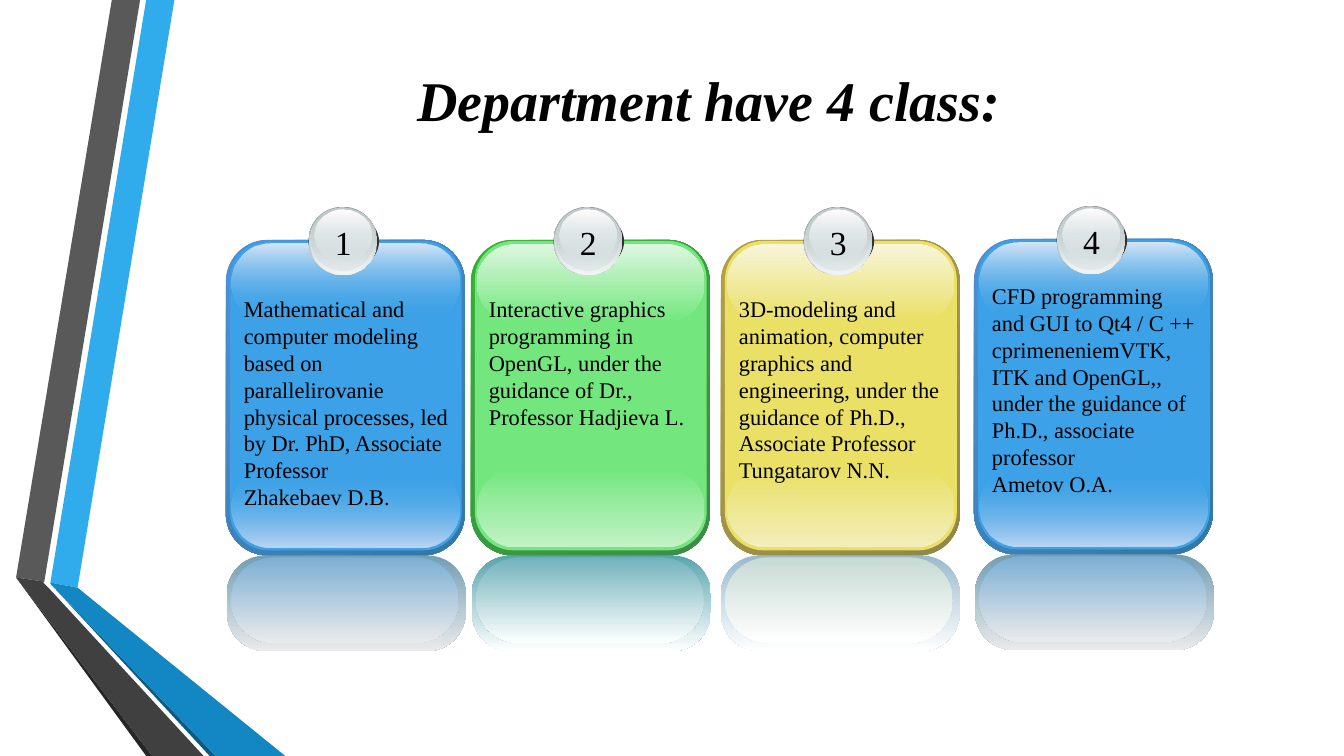
from pptx import Presentation
from pptx.dml.color import RGBColor
from pptx.enum.shapes import MSO_SHAPE
from pptx.enum.text import MSO_ANCHOR, MSO_AUTO_SIZE, PP_ALIGN
from pptx.oxml.ns import qn
from pptx.util import Pt
from lxml.etree import SubElement

PX = 9144  # 100 px to the inch

BLUE = {
    "rim": ("4E91D4", "3477A4"), "face": "3CA1E6",
    "bottom": (("3CA1E6", 0), "BDD6F3"), "top": ("D7E5F7", ("3CA1E6", 0)),
    "mirror": ("729EB4", "EAEAEA"), "mirror_face": ("7DAFD4", "EAEAEA"),
}
GREEN = {
    "rim": ("34B034", "3F8B4A"), "face": "73E77E",
    "bottom": ("73E77E", "C3F2C7"), "top": ("DDF7DF", "73E77E"),
    "mirror": ("58A4AE", "FFFFFF"), "mirror_face": ("72B2BB", "FFFFFF"),
}
YELLOW = {
    "rim": ("B59F43", "8F8849"), "face": "E9E065",
    "bottom": ("E9E065", "F3EEBB"), "top": ("F8F5DB", "E9E065"),
    "mirror": ("99BACC", "FFFFFF"), "mirror_face": ("C8DAD4", "FFFFFF"),
}
THEME = {
    "font": "Times New Roman", "text": "000000",
    "title_size": 40, "number_size": 24, "body_size": 16,
    "badge_shadow": "333333", "badge_rim": ("99A1A2", "D6E1E2"),
    "badge_ring": (("D6E1E2", 0), "F2F5F5"),
    "badge_face": ("C1CBCC", ("D6E1E2", 48)),
    "badge_gloss": ("FFFFFF", ("D6E1E2", 38)),
}


def add_filled(shapes, kind, box, paint, angle=90, corner=None):
    """Add a shape with a solid fill, or a gradient of (colour, opacity %) stops."""
    shape = shapes.add_shape(kind, *(value * PX for value in box))
    shape.shadow.inherit = False
    shape.line.fill.background()
    if corner is not None:
        shape.adjustments[0] = corner
    if isinstance(paint, str):
        shape.fill.solid()
        shape.fill.fore_color.rgb = RGBColor.from_string(paint)
        return
    shape.fill.gradient()
    shape.fill.gradient_angle = 360 - angle
    stops = [(stop, 100) if isinstance(stop, str) else stop for stop in paint]
    for gradient_stop, (colour, _) in zip(shape.fill.gradient_stops, stops):
        gradient_stop.color.rgb = RGBColor.from_string(colour)
    colours = list(shape._element.spPr.iter(qn("a:srgbClr")))
    for element, (_, opacity) in zip(colours, stops):
        if opacity < 100:
            SubElement(element, qn("a:alpha")).set("val", str(opacity * 1000))


def style(paragraph, size):
    paragraph.font.name = THEME["font"]
    paragraph.font.size = Pt(size)
    paragraph.font.color.rgb = RGBColor.from_string(THEME["text"])


presentation = Presentation()
presentation.slide_width = 1333 * PX
presentation.slide_height = 750 * PX
slide = presentation.slides.add_slide(presentation.slide_layouts[5])

# Folded ribbons on the left
ribbons = [
    ("30ACEC", [(50, 578), (77, 583), (173, 0), (145, 0)]),
    ("595959", [(139, 0), (111, 0), (16, 573), (44, 577)]),
    ("262626", [(16, 573), (145, 750), (151, 750)]),
    ("0C5A82", [(50, 579), (208, 750), (214, 750)]),
    ("1287C3", [(50, 578), (50, 579), (214, 750), (283, 750), (77, 583)]),
    ("404040", [(202, 750), (48, 583), (43, 578), (44, 577), (16, 573), (151, 750)]),
]
for colour, points in ribbons:
    builder = slide.shapes.build_freeform(*points[0], scale=PX)
    builder.add_line_segments(points[1:], close=True)
    ribbon = builder.convert_to_shape()
    ribbon.shadow.inherit = False
    ribbon.line.fill.background()
    ribbon.fill.solid()
    ribbon.fill.fore_color.rgb = RGBColor.from_string(colour)

# Title
title = slide.shapes.title
title.left, title.top, title.width, title.height = (
    value * PX for value in (155, 30, 1096, 137))
title.text_frame.text = "Department have 4 class:"
title.text_frame.vertical_anchor = MSO_ANCHOR.MIDDLE
heading = title.text_frame.paragraphs[0]
heading.alignment = PP_ALIGN.CENTER
heading.font.bold = heading.font.italic = True
style(heading, THEME["title_size"])

# Cards: left, top, mirror shift, text top, text height, palette, paragraphs
cards = [
    (224, 238, 1, 288, 226, BLUE, [
        "Mathematical and computer modeling based on parallelirovanie "
        "physical processes, led by Dr. PhD, Associate Professor",
        "Zhakebaev D.B."]),
    (467, 238, 1, 288, 145, GREEN, [
        "Interactive graphics programming in OpenGL, under the guidance of "
        "Dr., Professor Hadjieva L."]),
    (715, 238, 0, 288, 199, YELLOW, [
        "3D-modeling and animation, computer graphics and engineering, under "
        "the guidance of Ph.D., Associate Professor Tungatarov N.N."]),
    (966, 237, 1, 275, 226, BLUE, [
        "CFD programming and GUI to Qt4 / C ++ cprimeneniemVTK, ITK and "
        "OpenGL,, under the guidance of Ph.D., associate professor",
        "Ametov O.A."]),
]
# Layers measured from the card's top left corner
badge_layers = [
    ("badge_shadow", 82, -27, 70, 57), ("badge_rim", 82, -33, 68, 68),
    ("badge_ring", 83, -32, 66, 66), ("badge_face", 84, -32, 63, 62),
    ("badge_gloss", 88, -30, 56, 50),
]
for number, card in enumerate(cards, start=1):
    left, top, shift, text_top, text_height, palette, texts = card
    group = slide.shapes.add_group_shape()
    group.name = f"Class {number}"

    # Glossy panel and its reflection
    panel_layers = [
        ("rim", 0, 0, 237, 313, 45, 0.175),
        ("face", 4, 1, 230, 307, 90, 0.167),
        ("bottom", 6, 227, 226, 78, 90, 0.5),
        ("top", 6, 4, 226, 77, 90, 0.5),
        ("mirror", shift, 313, 237, 95, 90, 0.404),
        ("mirror_face", shift + 4, 315, 226, 85, 90, 0.5),
    ]
    for part, dx, dy, width, height, angle, corner in panel_layers:
        add_filled(group.shapes, MSO_SHAPE.ROUNDED_RECTANGLE,
                   (left + dx, top + dy, width, height),
                   palette[part], angle, corner)

    # Round badge
    for part, dx, dy, width, height in badge_layers:
        add_filled(group.shapes, MSO_SHAPE.OVAL,
                   (left + dx, top + dy, width, height), THEME[part])

    # Badge number and class description
    labels = [
        ((left + 98, top - 23, 37, 51), [str(number)],
         THEME["number_size"], PP_ALIGN.CENTER, False),
        ((left + 8, text_top, 225, text_height), texts,
         THEME["body_size"], PP_ALIGN.LEFT, True),
    ]
    for box, lines, size, alignment, wrap in labels:
        label = group.shapes.add_textbox(*(value * PX for value in box))
        frame = label.text_frame
        frame.word_wrap = wrap
        frame.auto_size = MSO_AUTO_SIZE.SHAPE_TO_FIT_TEXT
        frame.text = "\n".join(lines)
        for paragraph in frame.paragraphs:
            paragraph.alignment = alignment
            style(paragraph, size)

presentation.save("out.pptx")
